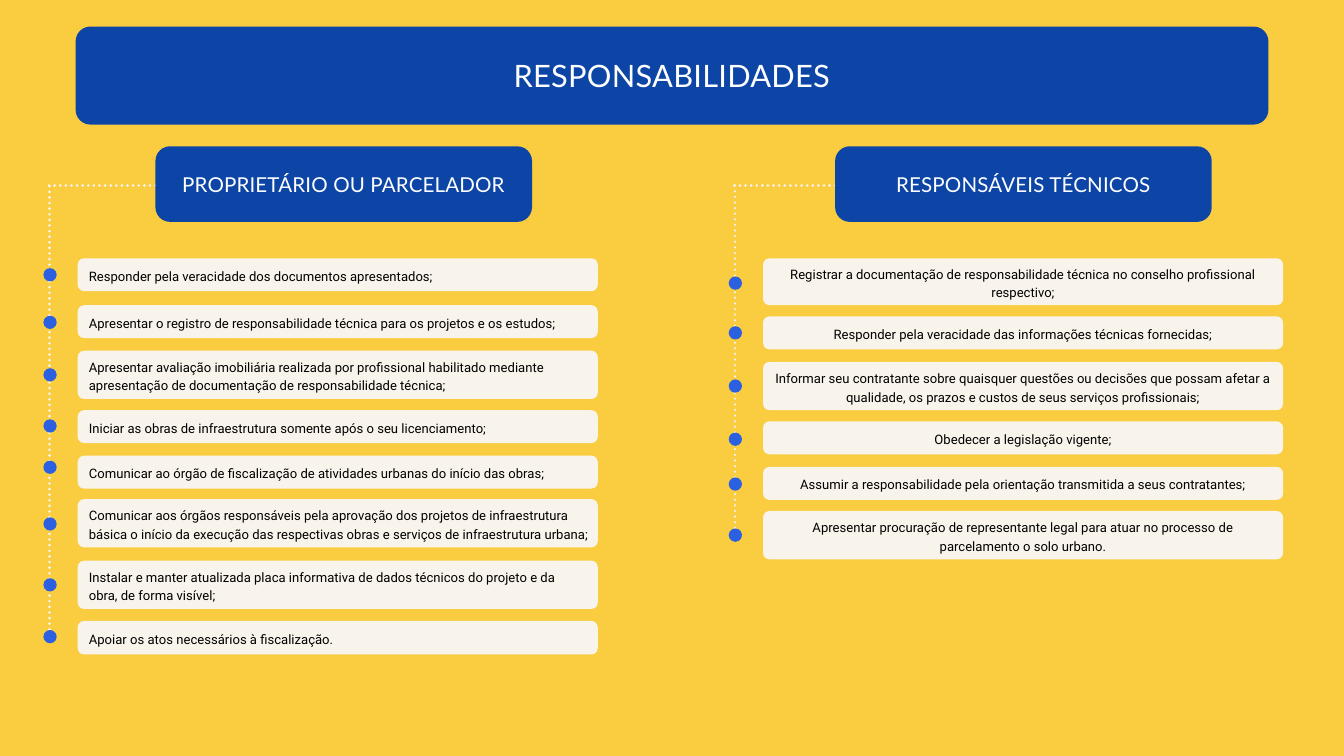
"""Build the slide on the responsibilities of owners and technical leads."""
import pptx
import pptx.dml.color
import pptx.enum.dml
import pptx.enum.shapes
import pptx.enum.text
import pptx.oxml
import pptx.oxml.ns
import pptx.util

PX = 9525
COLORS = {"yellow": "FACC40", "navy": "0C45A6", "blue": "2B60E1", "cream": "F8F4EB",
          "dots": "F4F4F4", "white": "FFFFFF", "black": "000000"}
RGB = {name: pptx.dml.color.RGBColor.from_string(value) for name, value in COLORS.items()}
SHAPE = pptx.enum.shapes.MSO_SHAPE
ALIGN = pptx.enum.text.PP_ALIGN
LINE_H = 26
TEXT_W = 711
WIDE_W = 743


def add_block(kind, x, y, w, h, color, radius=0):
    sp = s.shapes.add_shape(kind, x * PX, y * PX, w * PX, h * PX)
    sp.shadow.inherit = False
    sp.fill.solid()
    sp.fill.fore_color.rgb = RGB[color]
    sp.line.fill.background()
    if radius:
        sp.adjustments[0] = radius / min(w, h)
    return sp


def set_text(sp, text, font, size, leading, color, align, spacing=0):
    tf = sp.text_frame
    tf.word_wrap = True
    tf.auto_size = pptx.enum.text.MSO_AUTO_SIZE.SHAPE_TO_FIT_TEXT
    tf.vertical_anchor = pptx.enum.text.MSO_ANCHOR.TOP
    tf.margin_left = tf.margin_right = tf.margin_top = tf.margin_bottom = 0
    p = tf.paragraphs[0]
    p.alignment = align
    p.line_spacing = pptx.util.Pt(leading)
    r = p.add_run()
    r.text = text
    r.font.name = font
    r.font.size = pptx.util.Pt(size)
    r.font.color.rgb = RGB[color]
    if spacing:
        for props in sp.element.iter(pptx.oxml.ns.qn("a:rPr")):
            props.set("spc", str(spacing))


prs = pptx.Presentation()
prs.slide_width = 1920 * PX
prs.slide_height = 1080 * PX
s = prs.slides.add_slide(prs.slide_layouts[5])
s.background.fill.solid()
s.background.fill.fore_color.rgb = RGB["yellow"]

banner = add_block(SHAPE.ROUNDED_RECTANGLE, 108, 38, 1704, 140, "navy", 21)
title = s.shapes.title
title.left, title.top, title.width, title.height = 190 * PX, 77 * PX, 1540 * PX, 58 * PX
set_text(title, "RESPONSABILIDADES", "Lato", 33, 42.9, "white", ALIGN.CENTER, 30)
banner.element.addnext(title.element)

columns = [
    {"heading": "PROPRIETÁRIO OU PARCELADOR", "heading_x": 222, "line_x": 71, "line_end": 899,
     "card_x": 111, "align": ALIGN.LEFT, "items": [
         (369, 47, 383, 1, TEXT_W, "Responder pela veracidade dos documentos apresentados;"),
         (436, 47, 451, 1, TEXT_W, "Apresentar o registro de responsabilidade técnica para os projetos e "
                                   "os estudos;"),
         (501, 69, 526, 2, TEXT_W, "Apresentar avaliação imobiliária realizada por profissional habilitado "
                                   "mediante apresentação de documentação de responsabilidade técnica;"),
         (586, 47, 599, 1, TEXT_W, "Iniciar as obras de infraestrutura somente após o seu licenciamento;"),
         (651, 47, 658, 1, TEXT_W, "Comunicar ao órgão de fiscalização de atividades urbanas do início "
                                   "das obras;"),
         (713, 69, 739, 2, WIDE_W, "Comunicar aos órgãos responsáveis pela aprovação dos projetos de "
                                   "infraestrutura básica o início da execução das respectivas obras e "
                                   "serviços de infraestrutura urbana;"),
         (801, 69, 826, 2, TEXT_W, "Instalar e manter atualizada placa informativa de dados técnicos do "
                                   "projeto e da obra, de forma visível;"),
         (887, 48, 900, 1, TEXT_W, "Apoiar os atos necessários à fiscalização.")]},
    {"heading": "RESPONSÁVEIS TÉCNICOS", "heading_x": 1193, "line_x": 1050, "line_end": 762,
     "card_x": 1090, "align": ALIGN.CENTER, "items": [
         (369, 67, 395, 2, TEXT_W, "Registrar a documentação de responsabilidade técnica no conselho "
                                   "profissional respectivo;"),
         (452, 47, 466, 1, TEXT_W, "Responder pela veracidade das informações técnicas fornecidas;"),
         (517, 69, 542, 2, TEXT_W, "Informar seu contratante sobre quaisquer questões ou decisões que possam "
                                   "afetar a qualidade, os prazos e custos de seus serviços profissionais;"),
         (602, 47, 618, 1, TEXT_W, "Obedecer a legislação vigente;"),
         (667, 47, 682, 1, TEXT_W, "Assumir a responsabilidade pela orientação transmitida a seus "
                                   "contratantes;"),
         (730, 69, 755, 2, TEXT_W, "Apresentar procuração de representante legal para atuar no processo de "
                                   "parcelamento o solo urbano.")]},
]

for col in columns:
    line_x, heading_x, card_x = col["line_x"], col["heading_x"], col["card_x"]
    for ends in ((line_x - 1, 265, line_x + 278, 265), (line_x, col["line_end"], line_x, 262)):
        line = s.shapes.add_connector(pptx.enum.shapes.MSO_CONNECTOR.STRAIGHT, *[v * PX for v in ends])
        line.line.color.rgb = RGB["dots"]
        line.line.width = pptx.util.Pt(3)
        line.line.dash_style = pptx.enum.dml.MSO_LINE.ROUND_DOT
        line.element.spPr.find(pptx.oxml.ns.qn("a:ln")).set("cap", "rnd")
        line.element.spPr.append(pptx.oxml.parse_xml(
            f'<a:effectLst {pptx.oxml.ns.nsdecls("a")}/>'))

    add_block(SHAPE.ROUNDED_RECTANGLE, heading_x, 209, 538, 108, "navy", 21)
    heading = s.shapes.add_textbox((heading_x + 29) * PX, 243 * PX, 480 * PX, 38 * PX)
    set_text(heading, col["heading"], "Lato", 22, 28.6, "white", ALIGN.CENTER, 20)

    for top, height, dot_top, lines, text_w, text in col["items"]:
        add_block(SHAPE.OVAL, line_x - 9, dot_top, 19, 19, "blue")
        add_block(SHAPE.ROUNDED_RECTANGLE, card_x, top, 743, height, "cream", 9)
        text_h = lines * LINE_H
        text_top = top + (height - text_h) // 2
        box = s.shapes.add_textbox((card_x + 16) * PX, text_top * PX, text_w * PX, text_h * PX)
        set_text(box, text, "Roboto", 14, 19.9, "black", col["align"])

prs.save("out.pptx")
